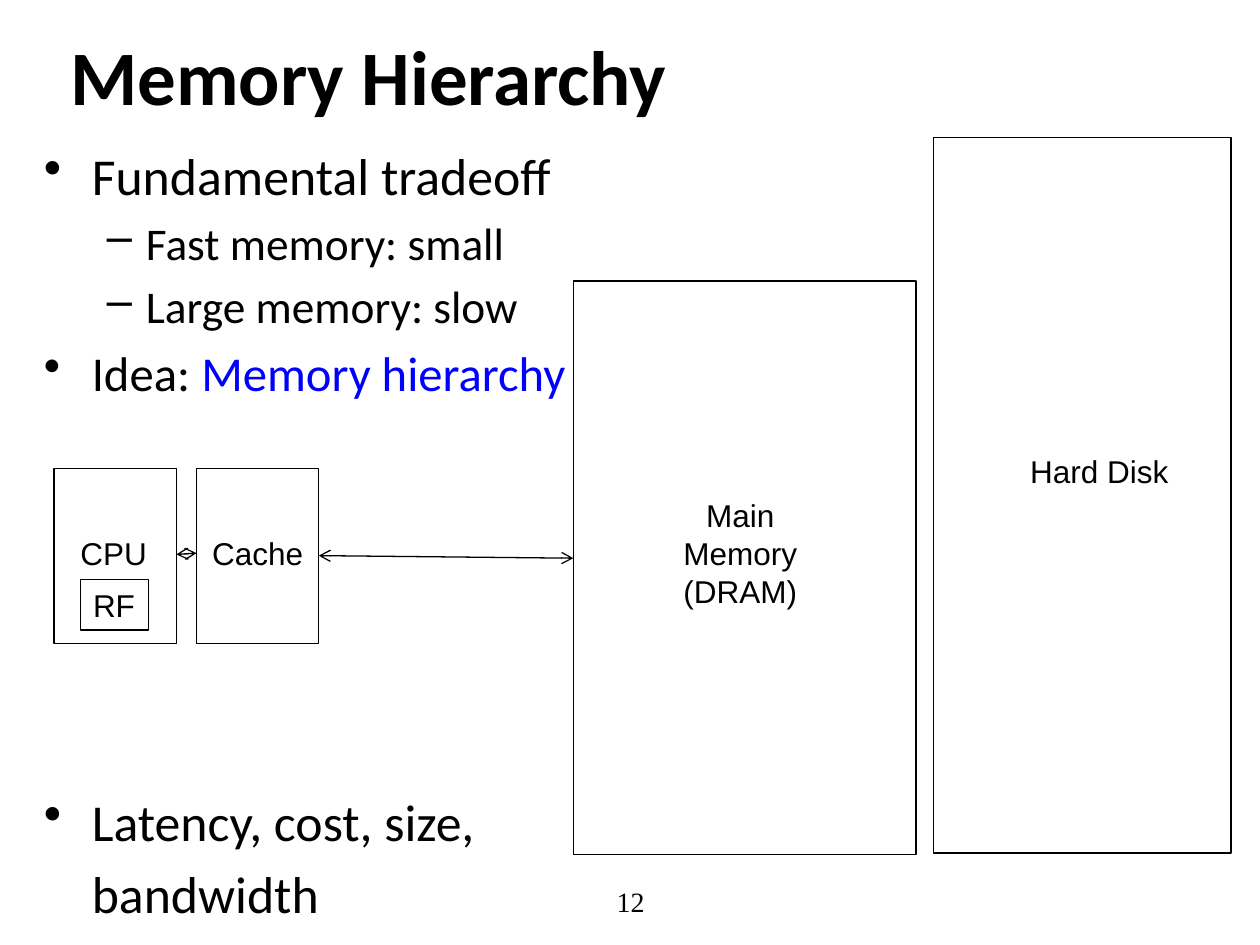
"""Build the Memory Hierarchy slide: tradeoff bullets around a block diagram."""
from lxml.etree import SubElement
from pptx import Presentation
from pptx.dml.color import RGBColor
from pptx.enum.shapes import MSO_CONNECTOR as Connector, MSO_SHAPE as Preset
from pptx.enum.text import MSO_ANCHOR as Anchor, PP_ALIGN as Align
from pptx.oxml.ns import qn
from pptx.util import Inches, Pt

COLORS = {"ink": "000000", "accent": "0000FF"}
LINE_WIDTH = 0.75

TITLE = ("Memory Hierarchy", (0.46, -0.03, 9, 1.25))
PAGE_NUMBER = ("12", (3.42, 6.95, 3.17, 0.4))

BULLETS_AT = (0.25, 1.09, 9.42, 5.68)
DIAGRAM_GAP = 222
INDENTS = {0: (0.38, -0.38), 1: (0.81, -0.31)}
# level, bullet, size, space before, runs
BULLETS = [
    (0, "•", 29.6, 5.9, [("Fundamental tradeoff", "ink")]),
    (1, "–", 25.9, 5.2, [("Fast memory: small", "ink")]),
    (1, "–", 25.9, 5.2, [("Large memory: slow", "ink")]),
    (0, "•", 27.8, 5.6, [("Idea: ", "ink"), ("Memory hierarchy", "accent")]),
    (0, "•", 29.6, DIAGRAM_GAP, [("Latency, cost, size,", "ink")]),
    (0, None, 29.6, 5.9, [("bandwidth", "ink")]),
]

BLOCKS = [
    (0.43, 3.72, 0.97, 1.39),
    (1.56, 3.72, 0.97, 1.39),
    (4.55, 2.23, 2.72, 4.55),
    (7.41, 1.09, 2.36, 5.68),
]
REGISTER_FILE = ("RF", (0.64, 4.6, 0.54, 0.4))
LABELS = [
    (["CPU"], (0.54, 4.19, 0.74, 0.4), Align.LEFT, False),
    (["Cache"], (1.56, 4.19, 0.97, 0.4), Align.CENTER, True),
    (["Main", "Memory", "(DRAM)"], (5.32, 3.89, 1.11, 1.31), Align.CENTER, False),
    (["Hard Disk"], (8.07, 3.54, 1.31, 0.71), Align.CENTER, True),
]
BUSES = [(4.55, 4.43, 2.53, 4.41), (1.56, 4.39, 1.4, 4.4)]


def inches(values):
    return [Inches(value) for value in values]


def color(name):
    return RGBColor.from_string(COLORS[name])


def style(paragraph, font_name, size, align=Align.LEFT, bold=False):
    paragraph.alignment = align
    font = paragraph.font
    font.name, font.size, font.bold = font_name, Pt(size), bold
    font.color.rgb = color("ink")


def write(frame, lines, font_name, size, align=Align.LEFT, bold=False,
          wrap=True, anchor=Anchor.TOP):
    frame.word_wrap = wrap
    frame.vertical_anchor = anchor
    for number, line in enumerate(lines):
        paragraph = frame.paragraphs[0] if number == 0 else frame.add_paragraph()
        paragraph.text = line
        style(paragraph, font_name, size, align, bold)


def add_label(slide, lines, at, *args, **options):
    write(slide.shapes.add_textbox(*inches(at)).text_frame, lines, *args, **options)


def add_block(slide, at):
    block = slide.shapes.add_shape(Preset.RECTANGLE, *inches(at))
    block.shadow.inherit = False
    block.fill.background()
    block.line.color.rgb = color("ink")
    block.line.width = Pt(LINE_WIDTH)
    return block


def add_bus(slide, ends):
    bus = slide.shapes.add_connector(Connector.STRAIGHT, *inches(ends))
    bus.line.color.rgb = color("ink")
    bus.line.width = Pt(LINE_WIDTH)
    outline = bus.line._get_or_add_ln()
    for end in ("a:headEnd", "a:tailEnd"):
        SubElement(outline, qn(end), type="arrow")
    SubElement(bus._element.spPr, qn("a:effectLst"))


def add_bullets(slide):
    frame = slide.shapes.add_textbox(*inches(BULLETS_AT)).text_frame
    frame.word_wrap = True
    for number, (level, bullet, size, space, runs) in enumerate(BULLETS):
        paragraph = frame.paragraphs[0] if number == 0 else frame.add_paragraph()
        style(paragraph, "Calibri", size)
        paragraph.level = level
        paragraph.space_before = Pt(space)
        for text, tint in runs:
            run = paragraph.add_run()
            run.text = text
            if tint != "ink":
                run.font.color.rgb = color(tint)
        margin, hanging = INDENTS[level]
        properties = paragraph._p.get_or_add_pPr()
        properties.set("marL", str(Inches(margin)))
        properties.set("indent", str(Inches(hanging) if bullet else 0))
        if bullet:
            mark = SubElement(properties, qn("a:buChar"), char=bullet)
            fill = properties.find(qn("a:defRPr"))
            if fill is not None:
                fill.addprevious(mark)


def main():
    deck = Presentation()
    deck.slide_width, deck.slide_height = Inches(10), Inches(7.5)
    slide = deck.slides.add_slide(deck.slide_layouts[6])

    title, title_at = TITLE
    add_label(slide, [title], title_at, "Calibri", 44, bold=True, anchor=Anchor.MIDDLE)
    add_bullets(slide)
    page, page_at = PAGE_NUMBER
    add_label(slide, [page], page_at, "Times New Roman", 16, Align.CENTER,
              anchor=Anchor.MIDDLE)

    for at in BLOCKS:
        add_block(slide, at)
    for lines, at, align, wrap in LABELS:
        add_label(slide, lines, at, "Arial", 18, align, wrap=wrap)
    register, register_at = REGISTER_FILE
    write(add_block(slide, register_at).text_frame, [register], "Arial", 18, wrap=False)
    for ends in BUSES:
        add_bus(slide, ends)

    deck.save("out.pptx")


if __name__ == "__main__":
    main()
